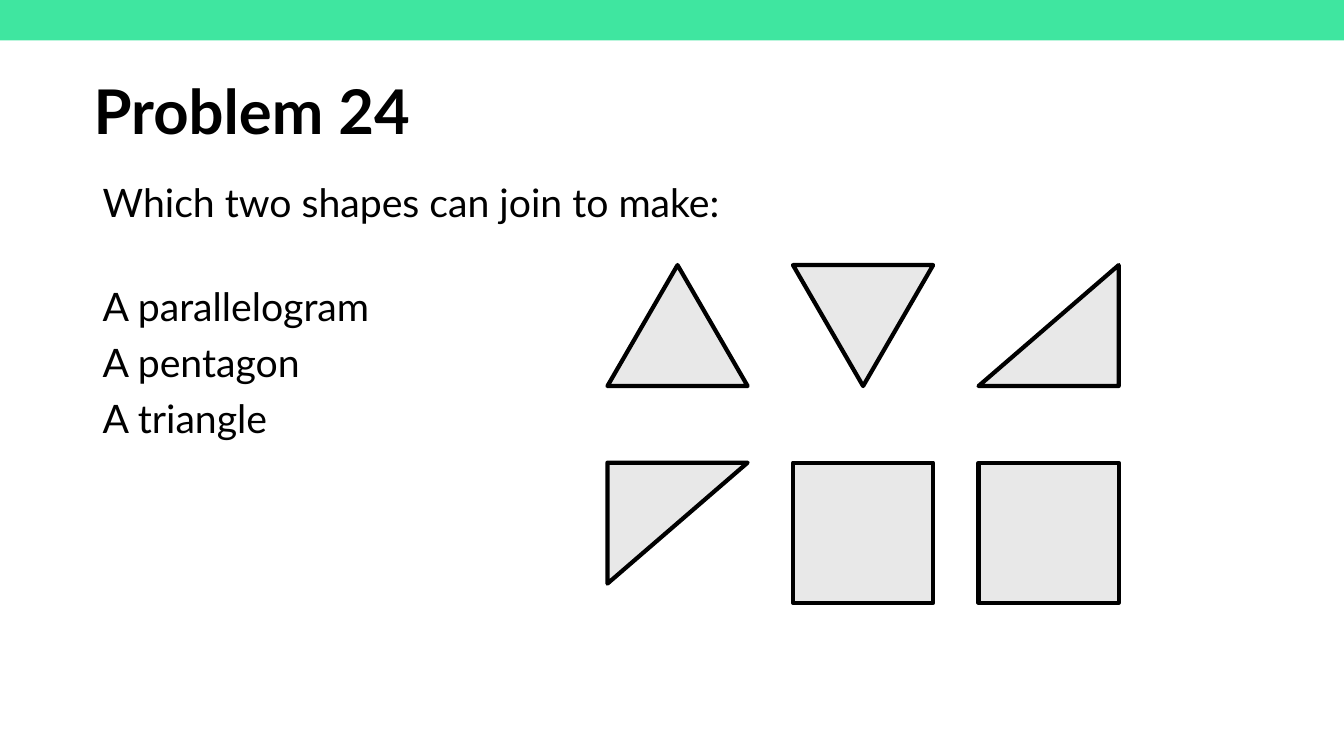
from pptx import Presentation
from pptx.dml.color import RGBColor
from pptx.enum.shapes import MSO_SHAPE
from pptx.enum.text import MSO_ANCHOR
from pptx.util import Inches, Pt

RECT = MSO_SHAPE.RECTANGLE
TRIANGLE = MSO_SHAPE.ISOSCELES_TRIANGLE
RIGHT_TRIANGLE = MSO_SHAPE.RIGHT_TRIANGLE
TOP, MIDDLE = MSO_ANCHOR.TOP, MSO_ANCHOR.MIDDLE

THEME = {
    "band": RGBColor(0x3F, 0xE6, 0xA0),
    "shape": RGBColor(0xE8, 0xE8, 0xE8),
    "ink": RGBColor(0, 0, 0),
    "title": {"name": "Lato", "size": Pt(44), "bold": True},
    "body": {"name": "Lato", "size": Pt(28), "bold": False},
}

prs = Presentation()
prs.slide_width, prs.slide_height = Inches(13.33), Inches(7.5)
s = prs.slides.add_slide(prs.slide_layouts[6])


def add_filled(kind, left, top, width, height, color):
    sp = s.shapes.add_shape(kind, Inches(left), Inches(top), Inches(width), Inches(height))
    sp.shadow.inherit = False
    sp.fill.solid()
    sp.fill.fore_color.rgb = color
    return sp


def add_text(left, top, width, height, anchor, style, lines):
    sp = s.shapes.add_textbox(Inches(left), Inches(top), Inches(width), Inches(height))
    tf = sp.text_frame
    tf.word_wrap = True
    tf.vertical_anchor = anchor
    for i, (text, gap) in enumerate(lines):
        p = tf.paragraphs[0] if i == 0 else tf.add_paragraph()
        p.line_spacing = 0.9
        p.space_before = Pt(gap)
        r = p.add_run()
        r.text = text
        for key, value in THEME[style].items():
            setattr(r.font, key, value)
        r.font.color.rgb = THEME["ink"]


band = add_filled(RECT, 0, -0.02, 13.33, 0.42, THEME["band"])
band.line.fill.background()

add_text(0.83, 0.41, 11.5, 1.45, MIDDLE, "title", [("Problem 24", 0)])
add_text(0.92, 1.77, 11.5, 5.33, TOP, "body", [
    ("Which two shapes can join to make:", 0),
    ("A parallelogram", 44),
    ("A pentagon", 10),
    ("A triangle", 10),
])

SIDE, TRIANGLE_HEIGHT = 1.39, 1.2
FIRST_CENTER, COLUMN_STEP = 6.72, 1.84
ROW_TOPS = (2.63, 4.59)
ROWS = (
    ((TRIANGLE, 0), (TRIANGLE, 180), (RIGHT_TRIANGLE, 270)),
    ((RIGHT_TRIANGLE, 90), (RECT, 0), (RECT, 0)),
)

for top, row in zip(ROW_TOPS, ROWS):
    for col, (kind, angle) in enumerate(row):
        shown_height = SIDE if kind == RECT else TRIANGLE_HEIGHT
        width, height = SIDE, shown_height
        if angle in (90, 270):
            width, height = height, width
        left = FIRST_CENTER + col * COLUMN_STEP - width / 2
        sp = add_filled(kind, left, top + (shown_height - height) / 2, width, height, THEME["shape"])
        sp.rotation = angle
        sp.line.color.rgb = THEME["ink"]
        sp.line.width = Pt(3)

prs.save("out.pptx")
